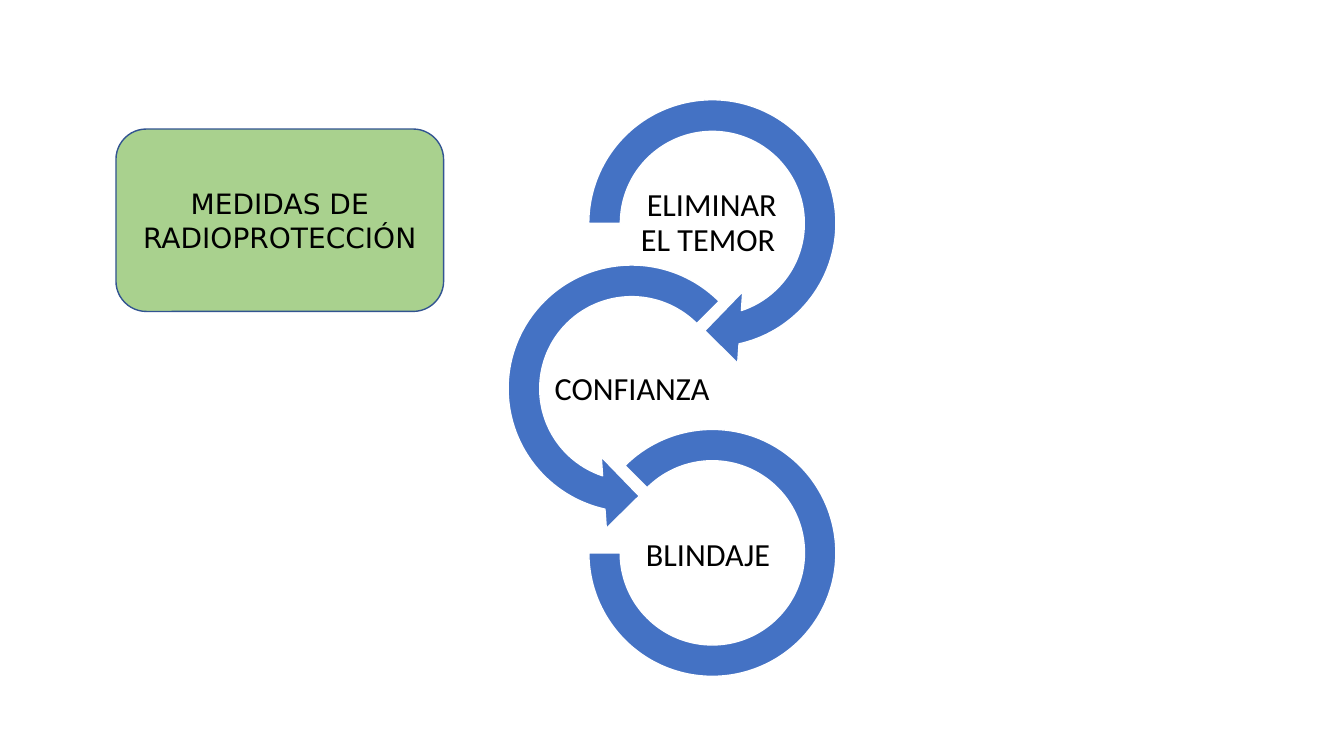
"""Build the slide on radiation protection measures as a chain of circular arrows."""
from dataclasses import dataclass

from pptx import Presentation
from pptx import util as u
from pptx.dml.color import RGBColor
from pptx.enum import shapes, text

WHITE = RGBColor(0xFF, 0xFF, 0xFF)
BLACK = RGBColor(0x00, 0x00, 0x00)
BLUE = RGBColor(0x44, 0x72, 0xC4)
GREEN = RGBColor(0xA9, 0xD1, 0x8E)
DARK_BLUE = RGBColor(0x32, 0x54, 0x91)

LABEL_SIZE = (1.58, 0.79)
LABEL_INSET = u.Inches(0.02)
LABEL_FRAME = {
    "margin_left": LABEL_INSET,
    "margin_right": LABEL_INSET,
    "margin_top": LABEL_INSET,
    "margin_bottom": LABEL_INSET,
}
LABEL_FONT = {"name": "Calibri", "size": u.Pt(23)}
HEADING_FONT = {"name": "DejaVu Sans", "size": u.Pt(20)}


@dataclass(frozen=True)
class Step:
    """One ring of the chain and the label inside it."""

    label: str
    label_position: tuple[float, float]
    preset: shapes.MSO_SHAPE
    ring_position: tuple[float, float]
    diameter: float
    adjustments: tuple[float, ...]


STEPS = (
    Step("ELIMINAR EL TEMOR ", (6.27, 1.82), shapes.MSO_SHAPE.CIRCULAR_ARROW,
         (5.64, 0.79), 2.85, (0.11, 11.42, 45, 108, 0.125)),
    Step("CONFIANZA ", (5.48, 3.47), shapes.MSO_SHAPE.LEFT_CIRCULAR_ARROW,
         (4.84, 2.43), 2.85, (0.11, 11.42, 63, 189, 0.125)),
    Step("BLINDAJE ", (6.27, 5.12), shapes.MSO_SHAPE.BLOCK_ARC,
         (5.84, 4.26), 2.45, (135, 108, 0.127)),
)


def apply_format(target, values: dict) -> None:
    """Set every attribute named in the format values."""
    for name, value in values.items():
        setattr(target, name, value)


def add_preset(slide, preset: shapes.MSO_SHAPE, position: tuple[float, float],
               size: tuple[float, float], fill: RGBColor, line: RGBColor):
    """Add a filled and outlined preset shape without shadow."""
    shape = slide.shapes.add_shape(preset, *map(u.Inches, position + size))
    shape.shadow.inherit = False
    shape.fill.solid()
    shape.fill.fore_color.rgb = fill
    shape.line.color.rgb = line
    shape.line.width = u.Pt(1)
    return shape


def write_text(shape, content: str, font: dict, frame: dict, spacing: float) -> None:
    """Write one centred paragraph in the middle of the shape."""
    text_frame = shape.text_frame
    apply_format(text_frame, {"word_wrap": True,
                              "vertical_anchor": text.MSO_ANCHOR.MIDDLE, **frame})
    paragraph = text_frame.paragraphs[0]
    apply_format(paragraph, {"alignment": text.PP_ALIGN.CENTER, "line_spacing": spacing})
    run = paragraph.add_run()
    run.text = content
    apply_format(run.font, font)
    run.font.color.rgb = BLACK


def add_step(slide, step: Step) -> None:
    """Draw a ring and its label."""
    ring = add_preset(slide, step.preset, step.ring_position,
                      (step.diameter, step.diameter), BLUE, WHITE)
    for index, value in enumerate(step.adjustments):
        ring.adjustments[index] = value
    label = slide.shapes.add_textbox(*map(u.Inches, step.label_position + LABEL_SIZE))
    write_text(label, step.label, LABEL_FONT, LABEL_FRAME, 0.9)


def main() -> None:
    """Create and save the presentation."""
    presentation = Presentation()
    presentation.slide_width = u.Inches(13.33)
    presentation.slide_height = u.Inches(7.5)
    slide = presentation.slides.add_slide(presentation.slide_layouts[6])
    for step in STEPS:
        add_step(slide, step)
    heading = add_preset(slide, shapes.MSO_SHAPE.ROUNDED_RECTANGLE,
                         (1.15, 1.28), (3.25, 1.81), GREEN, DARK_BLUE)
    write_text(heading, "MEDIDAS DE RADIOPROTECCIÓN", HEADING_FONT, {}, 1.0)
    presentation.save("out.pptx")


if __name__ == "__main__":
    main()
